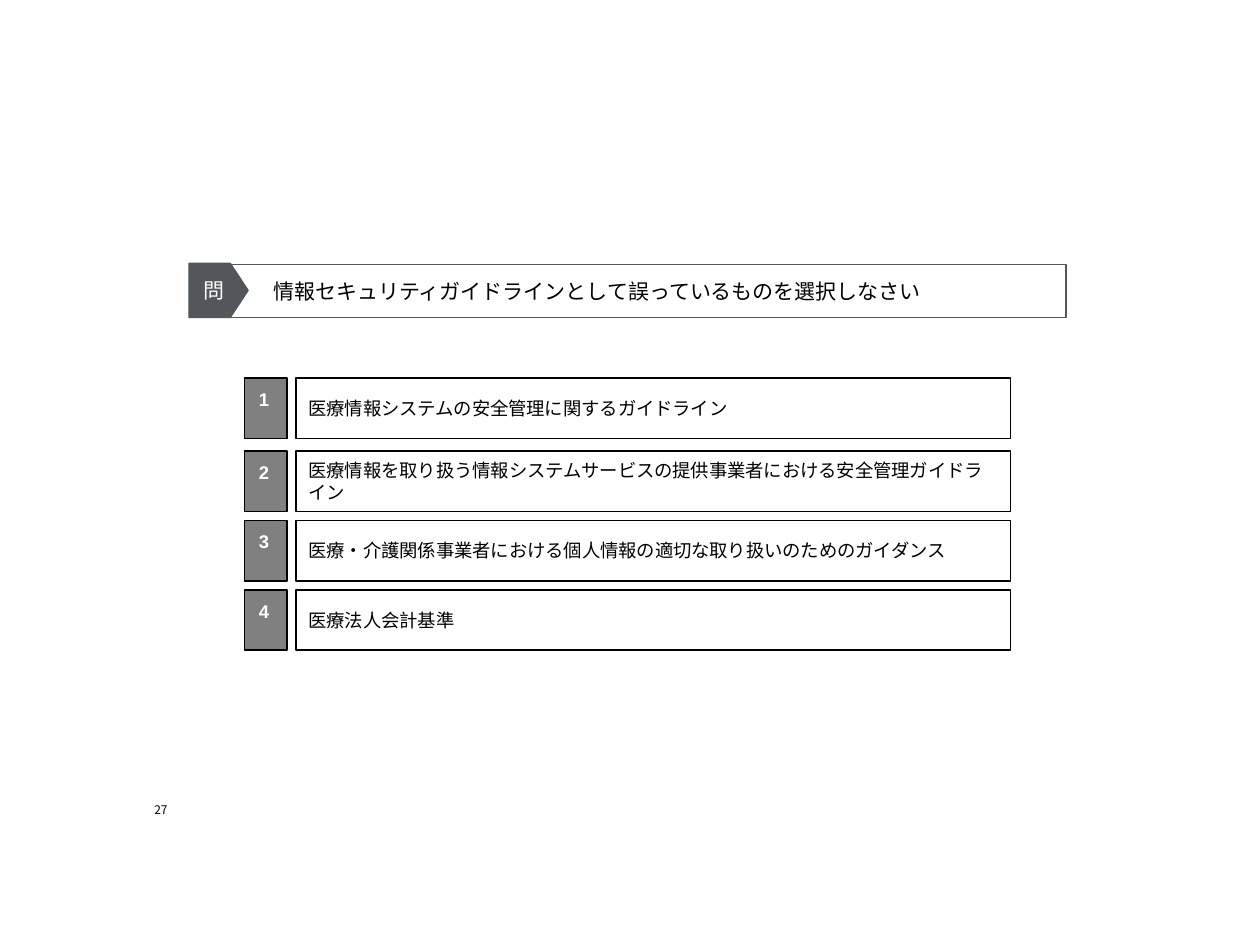
from pptx import Presentation
from pptx.dml.color import RGBColor
from pptx.enum.shapes import MSO_SHAPE as SHAPE
from pptx.enum.text import MSO_ANCHOR as ANCHOR, PP_ALIGN as ALIGN
from pptx.util import Inches, Pt

ARIAL, NOTO = "Arial", "Noto Sans CJK JP"
BLACK, WHITE, SLATE, GRAY = "000000", "FFFFFF", "53565A", "808080"
INSETS = (0.1, 0.05, 0.1, 0.05)
CHOICES = [
    (3.0, "医療情報システムの安全管理に関するガイドライン"),
    (3.58, "医療情報を取り扱う情報システムサービスの提供事業者における安全管理ガイドライン"),
    (4.13, "医療・介護関係事業者における個人情報の適切な取り扱いのためのガイダンス"),
    (4.68, "医療法人会計基準"),
]


def color(value):
    """Return the colour for a hex string."""
    return RGBColor.from_string(value)


def set_text(sp, text, size, font=ARIAL, ink=BLACK, bold=False,
             align=ALIGN.LEFT, anchor=ANCHOR.MIDDLE, insets=INSETS, wrap=True):
    """Write and format one paragraph in a shape."""
    tf = sp.text_frame
    tf.text = text
    tf.word_wrap = wrap
    tf.vertical_anchor = anchor
    tf.margin_left, tf.margin_top, tf.margin_right, tf.margin_bottom = map(Inches, insets)
    p = tf.paragraphs[0]
    p.alignment = align
    f = p.runs[0].font
    f.name, f.size, f.bold = font, Pt(size), bold
    f.color.rgb = color(ink)


def add_box(s, kind, box, fill, line, width):
    """Add an outlined shape, unfilled when fill is None."""
    sp = s.shapes.add_shape(kind, *map(Inches, box))
    sp.shadow.inherit = False
    if fill:
        sp.fill.solid()
        sp.fill.fore_color.rgb = color(fill)
    else:
        sp.fill.background()
    sp.line.color.rgb = color(line)
    sp.line.width = Pt(width)
    return sp


def add_question(s, text):
    """Add the question bar with its arrow-shaped tag."""
    bar = add_box(s, SHAPE.RECTANGLE, (1.79, 2.1, 6.67, 0.42), WHITE, SLATE, 1)
    set_text(bar, text, 12, insets=(0.38, 0.03, 0.03, 0.03))
    tag = add_box(s, SHAPE.PENTAGON, (1.5, 2.09, 0.47, 0.43), SLATE, SLATE, 0.75)
    tag.adjustments[0] = 0.33
    set_text(tag, "問", 12, font=NOTO, ink=WHITE, align=ALIGN.CENTER, wrap=False)


def add_choice(s, number, top, text):
    """Add one answer box and its number."""
    answer = add_box(s, SHAPE.RECTANGLE, (2.35, top, 5.67, 0.48), None, BLACK, 1)
    set_text(answer, text, 10.5)
    label = add_box(s, SHAPE.RECTANGLE, (1.94, top, 0.34, 0.48), GRAY, BLACK, 1)
    set_text(label, str(number), 10.5, ink=WHITE, bold=True, align=ALIGN.CENTER,
             anchor=ANCHOR.TOP, insets=(0, 0.08, 0.03, 0))


def add_page_number(s, number):
    """Add the page number."""
    sp = s.shapes.add_textbox(*map(Inches, (1.18, 6.34, 0.15, 0.14)))
    set_text(sp, str(number), 6.8, font=NOTO, align=ALIGN.RIGHT,
             anchor=ANCHOR.BOTTOM, insets=(0, 0, 0, 0), wrap=False)


def main():
    """Build and save the quiz slide."""
    prs = Presentation()
    prs.slide_width, prs.slide_height = Inches(10), Inches(7.5)
    s = prs.slides.add_slide(prs.slide_layouts[6])
    add_page_number(s, 27)
    add_question(s, "情報セキュリティガイドラインとして誤っているものを選択しなさい")
    for number, (top, text) in enumerate(CHOICES, 1):
        add_choice(s, number, top, text)
    prs.save("out.pptx")


if __name__ == "__main__":
    main()
